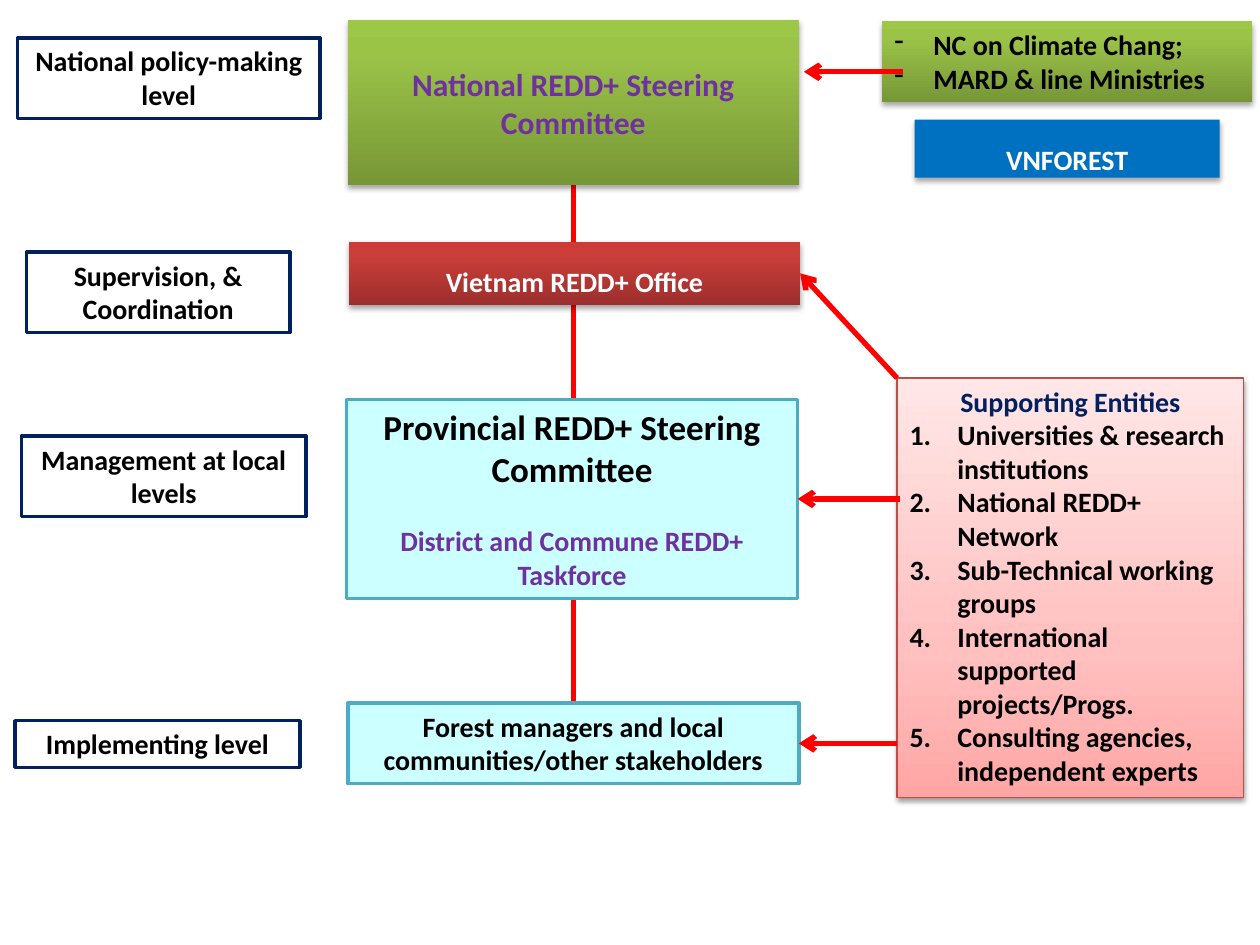
from dataclasses import dataclass

from lxml.etree import SubElement
from pptx import Presentation
from pptx.dml.color import RGBColor
from pptx.enum.shapes import MSO_CONNECTOR, MSO_SHAPE
from pptx.enum.text import MSO_ANCHOR, PP_ALIGN
from pptx.oxml import parse_xml
from pptx.oxml.ns import nsdecls, qn
from pptx.util import Inches, Pt


@dataclass(frozen=True)
class Theme:
    font: str = "Calibri"
    black: str = "000000"
    white: str = "FFFFFF"
    navy: str = "002060"
    purple: str = "7030A0"
    blue: str = "0070C0"
    red: str = "FF0000"
    teal: str = "4BACC6"
    cyan: str = "CCFFFF"
    rose: str = "BF4C48"
    body: int = 16
    large: int = 18
    heading: int = 20
    # Gradients run from the bottom edge to the top: (percent, colour)
    green_fade: tuple = ((0, "779737"), (80, "9BC348"), (100, "9DC746"))
    red_fade: tuple = ((0, "9C2F2D"), (80, "CB3E3A"), (100, "CE3B37"))
    pink_fade: tuple = ((0, "FFA6A5"), (35, "FFC0BF"), (100, "FFE7E7"))


THEME = Theme()
TOP, RIGHT, BOTTOM = 0, 3, 2


def set_fill(box, fill):
    """Fill with one colour, or with a gradient given as a tuple of stops."""
    if isinstance(fill, str):
        box.fill.solid()
        box.fill.fore_color.rgb = RGBColor.from_string(fill)
        return
    stops = "".join(
        f'<a:gs pos="{percent * 1000}"><a:srgbClr val="{color}"/></a:gs>'
        for percent, color in fill)
    gradient = parse_xml(
        f'<a:gradFill {nsdecls("a")} rotWithShape="1"><a:gsLst>{stops}</a:gsLst>'
        '<a:lin ang="16200000" scaled="0"/></a:gradFill>')
    box._element.spPr.find(qn("a:prstGeom")).addnext(gradient)


def set_shadow(box, opacity):
    effects = box._element.spPr.find(qn("a:effectLst"))
    effects.append(parse_xml(
        f'<a:outerShdw {nsdecls("a")} blurRad="{Pt(3.1)}" dist="{Pt(1.8)}" '
        'dir="5400000" rotWithShape="0"><a:srgbClr val="000000">'
        f'<a:alpha val="{opacity * 1000}"/></a:srgbClr></a:outerShdw>'))


def set_bullet(para, bullet, indent):
    """Hang the paragraph from a dash or from an automatic number."""
    properties = para._p.get_or_add_pPr()
    properties.set("marL", str(Inches(indent)))
    properties.set("indent", str(-Inches(indent)))
    if bullet == "number":
        SubElement(properties, qn("a:buFont"), typeface="+mj-lt")
        SubElement(properties, qn("a:buAutoNum"), type="arabicPeriod")
    else:
        SubElement(properties, qn("a:buFontTx"))
        SubElement(properties, qn("a:buChar"), char=bullet)


def add_para(para, text, size=THEME.body, color=THEME.black, bullet=None,
             indent=0, **layout):
    layout = {"alignment": PP_ALIGN.LEFT if bullet else PP_ALIGN.CENTER, **layout}
    for name, value in layout.items():
        setattr(para, name, value)
    if bullet:
        set_bullet(para, bullet, indent)
    span = para.add_run()
    span.text = text
    for name, value in {"name": THEME.font, "size": Pt(size), "bold": True}.items():
        setattr(span.font, name, value)
    span.font.color.rgb = RGBColor.from_string(color)


def add_box(page, place, fill, paras, line=None, line_width=2, shadow=None,
            anchor=MSO_ANCHOR.TOP):
    box = page.shapes.add_shape(MSO_SHAPE.RECTANGLE, *map(Inches, place))
    box.shadow.inherit = False
    set_fill(box, fill)
    if line:
        box.line.color.rgb = RGBColor.from_string(line)
        box.line.width = Pt(line_width)
    else:
        box.line.fill.background()
    if shadow:
        set_shadow(box, shadow)
    frame = box.text_frame
    frame.word_wrap = True
    frame.vertical_anchor = anchor
    for index, values in enumerate(paras):
        para = frame.add_paragraph() if index else frame.paragraphs[0]
        add_para(para, **values)
    return box


def add_line(page, start, end, arrow=False):
    line = page.shapes.add_connector(
        MSO_CONNECTOR.STRAIGHT, *map(Inches, (*start, *end)))
    line.line.color.rgb = RGBColor.from_string(THEME.red)
    line.line.width = Pt(3)
    if arrow:
        SubElement(line.line._get_or_add_ln(), qn("a:tailEnd"), type="arrow")
    SubElement(line._element.spPr, qn("a:effectLst"))
    return line


def add_levels(page):
    levels = [
        ("National policy-making level", (0.14, 0.3, 2.4, 0.64)),
        ("Supervision, & Coordination", (0.21, 2, 2.09, 0.64)),
        ("Management at local levels", (0.17, 3.46, 2.26, 0.64)),
        ("Implementing level", (0.12, 5.72, 2.26, 0.37)),
    ]
    for text, place in levels:
        add_box(page, place, THEME.white, [{"text": text}], THEME.navy)


def add_bodies(page):
    """Central column, from the national committee down to the communities."""
    national = add_box(
        page, (2.76, 0.16, 3.58, 1.31), THEME.green_fade,
        [{"text": "National REDD+ Steering Committee", "size": THEME.large,
          "color": THEME.purple}], shadow=35, anchor=MSO_ANCHOR.MIDDLE)
    office = add_box(
        page, (2.77, 1.92, 3.58, 0.5), THEME.red_fade,
        [{"text": "Vietnam REDD+ Office", "color": THEME.white,
          "line_spacing": 1.5}], shadow=35)
    provincial = add_box(
        page, (2.75, 3.17, 3.58, 1.58), THEME.cyan,
        [{"text": "Provincial REDD+ Steering Committee", "size": THEME.heading},
         {"text": "District and Commune REDD+ Taskforce",
          "color": THEME.purple, "space_before": Pt(19.5)}], THEME.teal)
    managers = add_box(
        page, (2.76, 5.58, 3.58, 0.64), THEME.cyan,
        [{"text": "Forest managers and local communities/other stakeholders"}],
        THEME.teal)
    return national, office, provincial, managers


def add_partners(page):
    """Right column: ministries, forest administration, supporting entities."""
    ministries = ["NC on Climate Chang;", "MARD & line Ministries"]
    entities = [
        "Universities & research institutions",
        "National REDD+ Network",
        "Sub-Technical working groups",
        "International supported projects/Progs.",
        "Consulting agencies, independent experts",
    ]
    add_box(page, (7, 0.17, 2.94, 0.64), THEME.green_fade,
            [{"text": text, "bullet": "-", "indent": 0.31} for text in ministries],
            shadow=35)
    add_box(page, (7.26, 0.95, 2.42, 0.46), THEME.blue,
            [{"text": "VNFOREST", "color": THEME.white, "line_spacing": 1.5}],
            shadow=35)
    add_box(page, (7.12, 3, 2.75, 3.33), THEME.pink_fade,
            [{"text": "Supporting Entities", "color": THEME.navy}]
            + [{"text": text, "bullet": "number", "indent": 0.38}
               for text in entities],
            THEME.rose, 0.75, shadow=38)


def main():
    deck = Presentation()
    deck.slide_width, deck.slide_height = Inches(10), Inches(7.5)
    page = deck.slides.add_slide(deck.slide_layouts[6])

    # The spine lies behind the boxes that it links
    spine = add_line(page, (4.55, 1.47), (4.55, 5.58))
    add_levels(page)
    national, office, provincial, managers = add_bodies(page)
    add_partners(page)
    spine.begin_connect(national, BOTTOM)
    spine.end_connect(managers, TOP)

    # Arrows from the right column to the bodies
    add_line(page, (7.17, 0.57), (6.38, 0.57), arrow=True)
    for body, start, end in [
        (office, (7.12, 3), (6.35, 2.17)),
        (provincial, (7.14, 3.96), (6.33, 3.96)),
        (managers, (7.12, 5.9), (6.34, 5.9)),
    ]:
        add_line(page, start, end, arrow=True).end_connect(body, RIGHT)

    deck.save("out.pptx")


if __name__ == "__main__":
    main()
